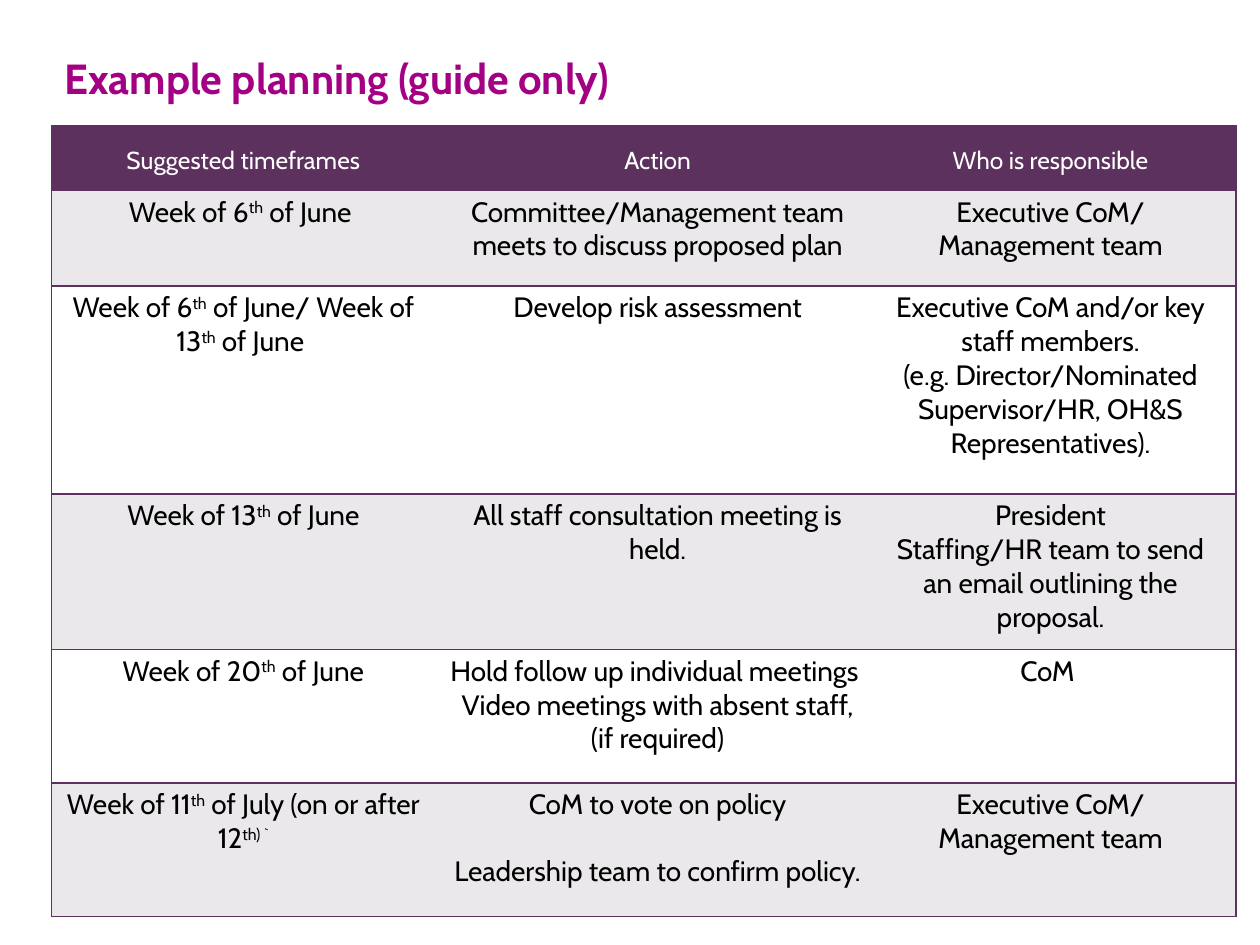
from lxml import etree
from pptx import Presentation
from pptx.dml.color import RGBColor
from pptx.enum.text import MSO_ANCHOR, PP_ALIGN
from pptx.oxml.ns import qn
from pptx.util import Inches, Pt

LEFT, CENTER = PP_ALIGN.LEFT, PP_ALIGN.CENTER
TOP, MIDDLE, BOTTOM = MSO_ANCHOR.TOP, MSO_ANCHOR.MIDDLE, MSO_ANCHOR.BOTTOM
FONT = "Cabin"
COLORS = {"title": "A40084", "plum": "5C315E", "band": "EAE8EA",
          "white": "FFFFFF", "black": "000000"}
PLAIN_STYLE = "{2D5ABB26-0587-4C30-8999-92F81FD0307C}"
TITLE_BOX = (0.41, 0.26, 9.17, 0.71)
TABLE_BOX = (0.41, 1, 9.4, 6.1)
COLUMNS = (3.16, 3.41, 2.82)
ROWS = (0.51, 0.76, 1.65, 1.06, 1.06, 1.06)
BORDERS = (("L", "T", "B"), ("T", "B"), ("R", "T", "B"))

HEADER = ("Suggested timeframes", "Action", "Who is responsible")
PLAN = (
    ("Week of 6^th^ of June ",
     "Committee/Management team meets to discuss proposed plan",
     "Executive CoM/ Management team"),
    ("Week of 6^th^ of June/ Week of 13^th^ of June ",
     "Develop risk assessment",
     "Executive CoM and/or key staff members.\n"
     "(e.g. Director/Nominated Supervisor/HR, OH&S Representatives)."),
    ("Week of 13^th^ of June",
     "All staff consultation meeting is held.",
     "President\nStaffing/HR team to send an email outlining the proposal."),
    ("Week of 20^th^ of June",
     "Hold follow up individual meetings \n"
     "Video meetings with absent staff, (if required)",
     "CoM "),
    ("Week of 11^th^ of July (on or after 12^th) `^",
     "CoM to vote on policy\nLeadership team to confirm policy.",
     "Executive CoM/ Management team"),
)
SPACED_CELL = (5, 1)


def rgb(name):
    return RGBColor.from_string(COLORS[name])


def write(tf, text, size, color, bold=False, align=CENTER, gap=0):
    for i, line in enumerate(text.split("\n")):
        p = tf.paragraphs[0] if i == 0 else tf.add_paragraph()
        p.alignment = align
        if i and gap:
            p.space_before = Pt(gap)
        for j, part in enumerate(line.split("^")):
            if not part:
                continue
            r = p.add_run()
            r.text = part
            r.font.name = FONT
            r.font.size = Pt(size)
            r.font.bold = bold
            r.font.color.rgb = rgb(color)
            if j % 2:
                r.font._element.set("baseline", "30000")


def add_borders(cell, sides):
    tcPr = cell._tc.get_or_add_tcPr()
    for side in sides:
        ln = etree.SubElement(tcPr, qn(f"a:ln{side}"), w=str(Pt(1)))
        fill = etree.SubElement(ln, qn("a:solidFill"))
        etree.SubElement(fill, qn("a:srgbClr"), val=COLORS["plum"])


def format_cell(cell, sides, fill, anchor, top):
    add_borders(cell, sides)
    cell.fill.solid()
    cell.fill.fore_color.rgb = rgb(fill)
    cell.vertical_anchor = anchor
    cell.margin_left = 0
    cell.margin_top = Inches(top)
    cell.margin_right = cell.margin_bottom = Inches(0.12)


def build_title(slide, box):
    sp = slide.shapes.title
    sp.left, sp.top, sp.width, sp.height = map(Inches, box)
    tf = sp.text_frame
    tf.vertical_anchor = MIDDLE
    write(tf, "Example planning (guide only)", 24, "title", bold=True, align=LEFT)


def build_plan(slide, box):
    frame = slide.shapes.add_table(len(ROWS), len(COLUMNS), *map(Inches, box))
    table = frame.table
    table._tbl.tblPr.find(qn("a:tableStyleId")).text = PLAIN_STYLE
    for column, share in zip(table.columns, COLUMNS):
        column.width = Inches(box[2] * share / sum(COLUMNS))
    for row, share in zip(table.rows, ROWS):
        row.height = Inches(box[3] * share / sum(ROWS))
    for i, texts in enumerate((HEADER, *PLAN)):
        for j, text in enumerate(texts):
            cell = table.cell(i, j)
            if i == 0:
                format_cell(cell, BORDERS[j], "plum", BOTTOM, 0.02)
                write(cell.text_frame, text, 14, "white")
            else:
                fill = "band" if i % 2 else "white"
                format_cell(cell, BORDERS[j], fill, TOP, 0.04)
                gap = 19 if (i, j) == SPACED_CELL else 0
                write(cell.text_frame, text, 16, "black", gap=gap)


def main():
    prs = Presentation()
    prs.slide_width, prs.slide_height = Inches(10), Inches(7.5)
    slide = prs.slides.add_slide(prs.slide_layouts[5])
    build_title(slide, TITLE_BOX)
    build_plan(slide, TABLE_BOX)
    prs.save("out.pptx")


if __name__ == "__main__":
    main()
